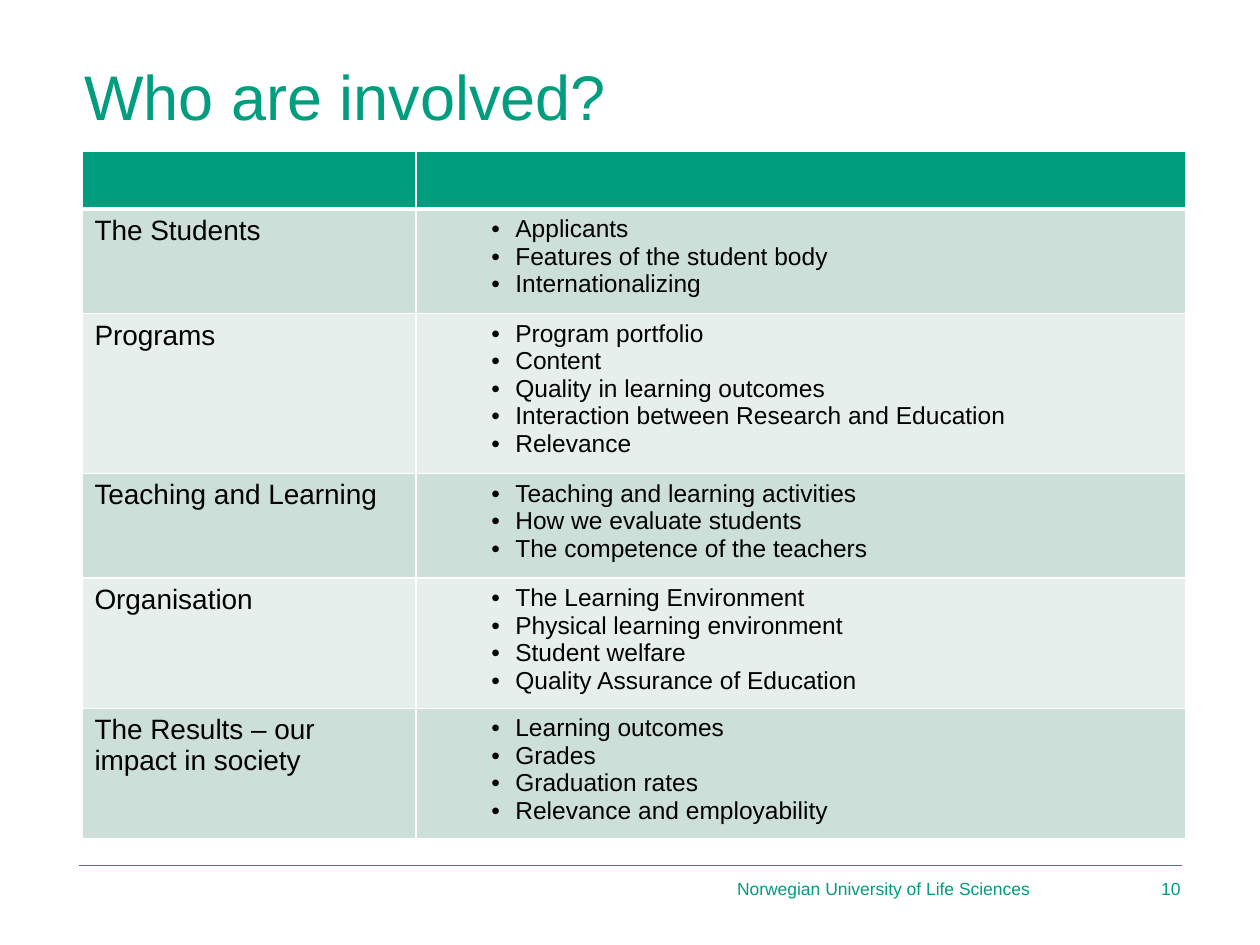
from lxml import etree
from pptx import Presentation
from pptx.dml.color import RGBColor
from pptx.enum import shapes, text
from pptx.oxml import ns
from pptx.util import Inches, Pt

GREEN, WHITE, BLACK = "009D7F", "FFFFFF", "000000"
BANDS = ["CCDFD8", "E7EFEC"]
COLS = [2.65, 6.11]
ROWS = [0.46, 0.83, 1.19, 0.83, 0.97, 0.97]
TOPICS = [
    ("The Students",
     ["Applicants", "Features of the student body", "Internationalizing"]),
    ("Programs",
     ["Program portfolio", "Content", "Quality in learning outcomes",
      "Interaction between Research and Education", "Relevance"]),
    ("Teaching and Learning",
     ["Teaching and learning activities", "How we evaluate students",
      "The competence of the teachers"]),
    ("Organisation",
     ["The Learning Environment", "Physical learning environment",
      "Student welfare", "Quality Assurance of Education"]),
    ("The Results – our impact in society",
     ["Learning outcomes", "Grades", "Graduation rates",
      "Relevance and employability"]),
]


def color(code):
    return RGBColor.from_string(code)


def add_run(para, words, size, code):
    run = para.add_run()
    run.text = words
    run.font.name = "Arial"
    run.font.size = Pt(size)
    run.font.bold = False
    run.font.color.rgb = color(code)


def place(shape, left, top, width, height):
    shape.left, shape.top = Inches(left), Inches(top)
    shape.width, shape.height = Inches(width), Inches(height)


def fill_box(shape, words, size, anchor, align):
    frame = shape.text_frame
    frame.margin_left = frame.margin_right = 0
    frame.margin_top = frame.margin_bottom = 0
    frame.word_wrap = True
    frame.auto_size = text.MSO_AUTO_SIZE.SHAPE_TO_FIT_TEXT
    frame.vertical_anchor = anchor
    para = frame.paragraphs[0]
    para.alignment = align
    add_run(para, words, size, GREEN)


def add_title(slide, words):
    title = slide.shapes.title
    place(title, 0.67, 0.45, 7.46, 0.61)
    fill_box(title, words, 36, text.MSO_ANCHOR.BOTTOM, text.PP_ALIGN.LEFT)


def add_note(slide, words, left, width, align):
    box = slide.shapes.add_textbox(
        Inches(left), Inches(6.97), Inches(width), Inches(0.17))
    fill_box(box, words, 10, text.MSO_ANCHOR.MIDDLE, align)


def add_rule(slide):
    rule = slide.shapes.add_connector(
        shapes.MSO_CONNECTOR.STRAIGHT,
        Inches(0.63), Inches(6.87), Inches(9.38), Inches(6.87))
    rule.line.color.rgb = color(GREEN)
    rule.line.width = Pt(1)
    etree.SubElement(rule._element.spPr, ns.qn("a:effectLst"))


def set_edges(cell, top, bottom):
    props = cell._tc.get_or_add_tcPr()
    widths = {"L": 1, "R": 1, "T": top, "B": bottom}
    for spot, (side, width) in enumerate(widths.items()):
        edge = etree.Element(ns.qn(f"a:ln{side}"), w=str(Pt(width)))
        fill = etree.SubElement(edge, ns.qn("a:solidFill"))
        etree.SubElement(fill, ns.qn("a:srgbClr"), val=WHITE)
        props.insert(spot, edge)


def style_cell(cell, code, top=1, bottom=1):
    cell.fill.solid()
    cell.fill.fore_color.rgb = color(code)
    set_edges(cell, top, bottom)


def add_bullet(para, words):
    para.level = 1
    props = para._p.get_or_add_pPr()
    props.set("marL", str(Inches(0.69)))
    props.set("indent", str(Inches(-0.19)))
    etree.SubElement(props, ns.qn("a:buFont"), typeface="Arial")
    etree.SubElement(props, ns.qn("a:buChar"), char="•")
    add_run(para, words, 14, BLACK)


def add_grid(slide):
    grid = slide.shapes.add_table(
        len(ROWS), len(COLS), Inches(0.65), Inches(1.2),
        Inches(sum(COLS)), Inches(sum(ROWS))).table
    for col, width in zip(grid.columns, COLS):
        col.width = Inches(width)
    for row, height in zip(grid.rows, ROWS):
        row.height = Inches(height)
    for cell in grid.rows[0].cells:
        style_cell(cell, GREEN, bottom=3)
    for num, (name, items) in enumerate(TOPICS, 1):
        head, body = grid.rows[num].cells
        for cell in (head, body):
            style_cell(cell, BANDS[(num - 1) % 2], top=3 if num == 1 else 1)
        add_run(head.text_frame.paragraphs[0], name, 16, BLACK)
        frame = body.text_frame
        for spot, item in enumerate(items):
            para = frame.add_paragraph() if spot else frame.paragraphs[0]
            add_bullet(para, item)


def main():
    deck = Presentation()
    deck.slide_width, deck.slide_height = Inches(10), Inches(7.5)
    slide = deck.slides.add_slide(deck.slide_layouts[5])
    add_rule(slide)
    add_title(slide, "Who are involved?")
    add_grid(slide)
    add_note(slide, "Norwegian University of Life Sciences", 5.85, 3.16,
             text.PP_ALIGN.LEFT)
    add_note(slide, "10", 9.04, 0.33, text.PP_ALIGN.RIGHT)
    deck.save("out.pptx")


if __name__ == "__main__":
    main()
